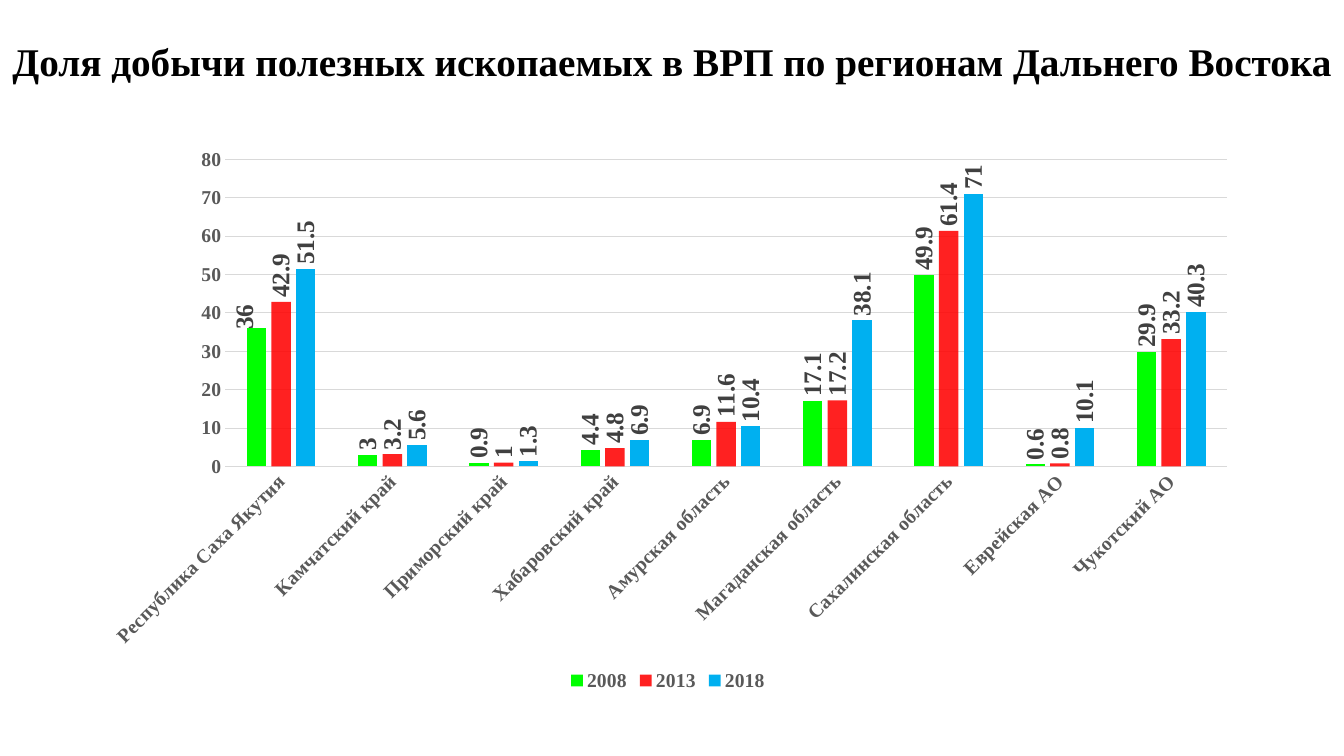
import pptx
import pptx.util
import pptx.chart.data
import pptx.dml.color
import pptx.enum.chart
import pptx.enum.text
import pptx.oxml
import pptx.oxml.ns

Inches = pptx.util.Inches
Pt = pptx.util.Pt
qn = pptx.oxml.ns.qn
FONT = "Times New Roman"
COLORS = {
    "title": "000000",
    "axis": "595959",
    "label": "404040",
    "grid": "D9D9D9",
    "2008": "00FF00",
    "2013": "FF0000",
    "2018": "00B0F0",
}
REGIONS = [
    "Республика Саха Якутия", "Камчатский край", "Приморский край",
    "Хабаровский край", "Амурская область", "Магаданская область",
    "Сахалинская область", "Еврейская АО", "Чукотский АО",
]
SHARES = {
    "2008": [36, 3, 0.9, 4.4, 6.9, 17.1, 49.9, 0.6, 29.9],
    "2013": [42.9, 3.2, 1, 4.8, 11.6, 17.2, 61.4, 0.8, 33.2],
    "2018": [51.5, 5.6, 1.3, 6.9, 10.4, 38.1, 71, 10.1, 40.3],
}


def style_font(font, size, color):
    font.name = FONT
    font.size = Pt(size)
    font.bold = True
    font.color.rgb = pptx.dml.color.RGBColor.from_string(COLORS[color])


def make_layout(**values):
    layout = pptx.oxml.parse_xml(
        f'<c:layout {pptx.oxml.ns.nsdecls("c")}><c:manualLayout/></c:layout>')
    for tag, value in values.items():
        layout[0].append(layout.makeelement(qn(f"c:{tag}"), {"val": str(value)}))
    return layout


deck = pptx.Presentation()
deck.slide_width = Inches(13.33)
deck.slide_height = Inches(7.5)
page = deck.slides.add_slide(deck.slide_layouts[5])

title = page.shapes.title
title.left, title.top = Inches(0), Inches(0.32)
title.width, title.height = Inches(13.33), Inches(0.57)
frame = title.text_frame
frame.text = "Доля добычи полезных ископаемых в ВРП по регионам Дальнего Востока"
frame.word_wrap = False
frame.auto_size = pptx.enum.text.MSO_AUTO_SIZE.NONE
frame.vertical_anchor = pptx.enum.text.MSO_ANCHOR.MIDDLE
para = frame.paragraphs[0]
para.alignment = pptx.enum.text.PP_ALIGN.CENTER
style_font(para.runs[0].font, 28, "title")

chart_data = pptx.chart.data.CategoryChartData()
chart_data.categories = REGIONS
for year, shares in SHARES.items():
    chart_data.add_series(year, shares)
chart = page.shapes.add_chart(
    pptx.enum.chart.XL_CHART_TYPE.COLUMN_CLUSTERED,
    Inches(0.85), Inches(1.36), Inches(11.55), Inches(5.54), chart_data).chart
chart.has_title = False
chart.font.name = "Calibri"
chart.font.size = Pt(10)

chart.has_legend = True
chart.legend.position = pptx.enum.chart.XL_LEGEND_POSITION.BOTTOM
chart.legend.include_in_layout = False
style_font(chart.legend.font, 14, "axis")

for axis in (chart.category_axis, chart.value_axis):
    axis.major_tick_mark = pptx.enum.chart.XL_TICK_MARK.NONE
    axis.minor_tick_mark = pptx.enum.chart.XL_TICK_MARK.NONE
    style_font(axis.tick_labels.font, 14, "axis")
category_axis, value_axis = chart.category_axis, chart.value_axis
category_axis.has_major_gridlines = False
category_axis._element.find(qn("c:txPr")).find(qn("a:bodyPr")).set("rot", "-2700000")
value_axis.minimum_scale = 0
value_axis.maximum_scale = 80
value_axis.major_unit = 10
value_axis.has_major_gridlines = True
value_axis.format.line.fill.background()
for line in (category_axis.format.line, value_axis.major_gridlines.format.line):
    line.width = Pt(0.75)
    line.color.rgb = pptx.dml.color.RGBColor.from_string(COLORS["grid"])

plot = chart.plots[0]
plot.gap_width = 219
plot.overlap = -27
plot.vary_by_categories = False
for series in plot.series:
    fill = series.format.fill
    fill.solid()
    fill.fore_color.rgb = pptx.dml.color.RGBColor.from_string(COLORS[series.name])
    series.invert_if_negative = False
    labels = series.data_labels
    labels.show_value = True
    targets = [labels]
    if series.name == "2008":
        targets.append(series.points[0].data_label)
    for target in targets:
        style_font(target.font, 18, "label")
        target.position = pptx.enum.chart.XL_LABEL_POSITION.OUTSIDE_END
    for body in labels._element.iter(qn("a:bodyPr")):
        body.set("rot", "-5400000")
        body.set("vert", "horz")

yakutia_label = plot.series[0].data_labels._element.find(qn("c:dLbl"))
yakutia_label.insert(1, make_layout(x=-0.01, y=0.01))

red = next(plot.series[1]._element.find(qn("c:spPr")).iter(qn("a:srgbClr")))
red.append(red.makeelement(qn("a:alpha"), {"val": "87000"}))

plot_area = chart._chartSpace.chart.plotArea
for old_layout in plot_area.findall(qn("c:layout")):
    plot_area.remove(old_layout)
plot_area.insert(0, make_layout(
    layoutTarget="inner", xMode="edge", yMode="edge", x=0.12, y=0.04, w=0.86, h=0.55))

deck.save("out.pptx")
